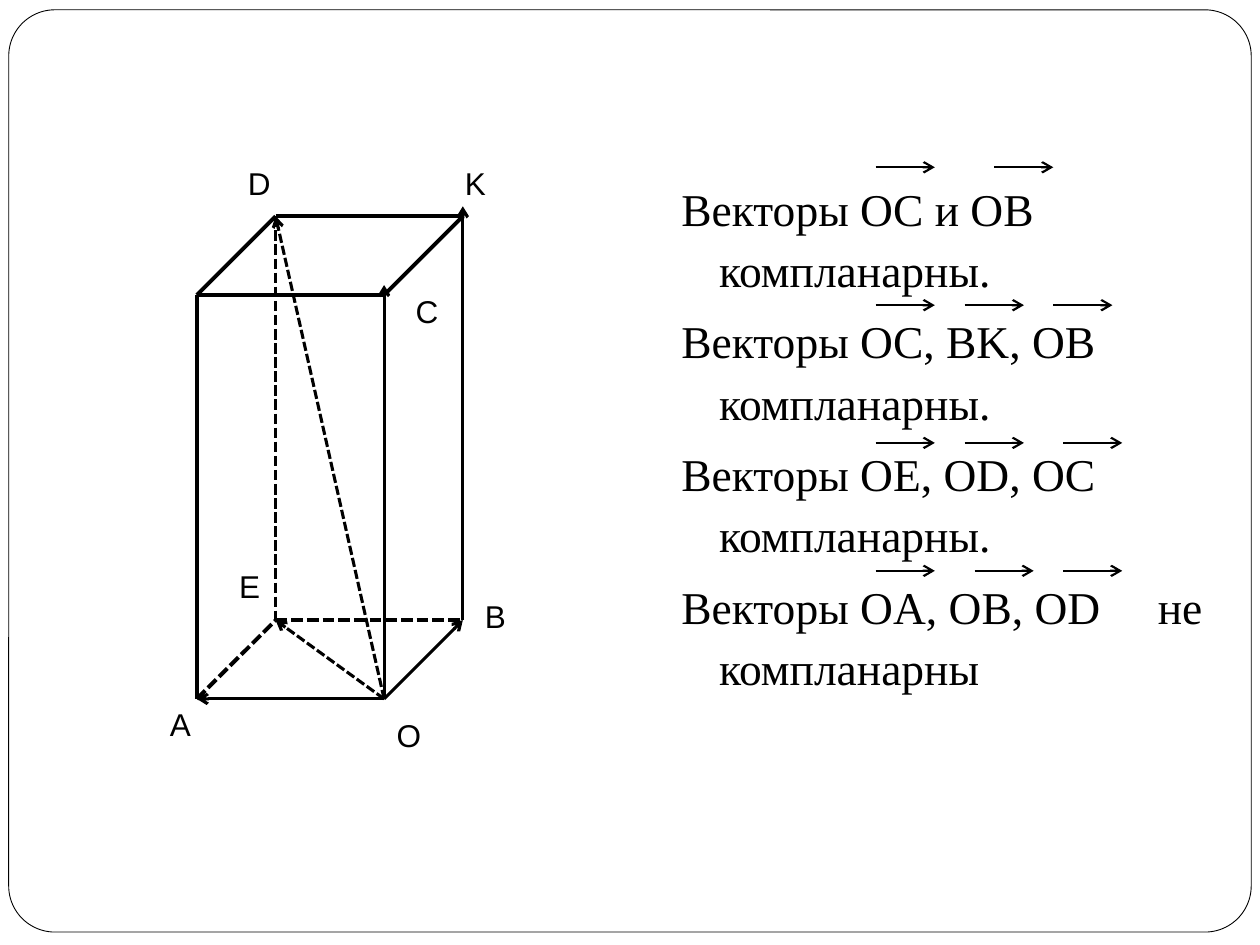
from lxml import etree
from pptx import Presentation
from pptx.dml.color import RGBColor
from pptx.enum import dml, shapes, text
from pptx.oxml.ns import qn
from pptx.util import Pt

THEME = {
    "ink": RGBColor(0, 0, 0),
    "paper": RGBColor(255, 255, 255),
    "body": {"name": "Times New Roman", "size": Pt(26)},
    "label": {"name": "Arial", "size": Pt(18)},
}

STATEMENTS = [
    ("Векторы OC и OB компланарны.",),
    ("Векторы OC, BK, OB компланарны.",),
    ("Векторы OE, OD, OC компланарны.",),
    ("Векторы OA, OB, OD", " ", "не компланарны"),
]
WORD_GAP = 26
PARAGRAPH = {"line_spacing": Pt(35), "space_before": Pt(5.8)}

VECTOR_MARKS = [
    (95.6, (500.4, 568.1)),
    (174.4, (500.4, 551.3, 601.9)),
    (253.1, (500.4, 551.3, 607.5)),
    (326.2, (500.4, 556.9, 607.5)),
]
MARK_LENGTH = 33.8

LEFT, BOTTOM, WIDTH, HEIGHT, DEPTH = 112.5, 399.4, 107, 230.8, 45
OVERSHOOT = 5.7
VERTICES = {
    "A": (LEFT, BOTTOM),
    "O": (LEFT + WIDTH, BOTTOM),
    "E": (LEFT + DEPTH, BOTTOM - DEPTH),
    "B": (LEFT + WIDTH + DEPTH, BOTTOM - DEPTH),
}
for base, top in zip("AOEB", "FCDK"):
    x, y = VERTICES[base]
    VERTICES[top] = (x, y - HEIGHT)

EDGES = [
    ("BK", 1.75, False, True),
    ("OC", 1.75, False, True),
    ("FA", 2, False, False),
    ("DE", 2, True, False),
    ("OA", 1.75, False, True),
    ("OB", 1.75, False, True),
    ("OE", 1.75, True, True),
    ("AE", 2.25, True, False),
    ("EB", 2.25, True, False),
    ("DK", 2.25, False, False),
    ("FC", 2.25, False, False),
    ("FD", 2.25, False, False),
    ("CK", 2.25, False, False),
    ("OD", 1.75, True, True),
]
LABELS = [
    ("D", 134.6, 90, 39.6),
    ("K", 258.5, 90, 39.6),
    ("C", 230.4, 163.4, 22.3),
    ("B", 270, 337.7, 33.8),
    ("O", 219.6, 405.4, 28.1),
    ("A", 90, 399.6, 22.3),
    ("E", 129.6, 320.4, 22.3),
]


def add_line(page, start, end, width, dashed=False, arrow=False):
    line = page.shapes.add_connector(
        shapes.MSO_CONNECTOR.STRAIGHT, *(Pt(v) for v in (*start, *end))
    )
    line.line.color.rgb = THEME["ink"]
    line.line.width = Pt(width)
    if dashed:
        line.line.dash_style = dml.MSO_LINE.SQUARE_DOT
    if arrow:
        etree.SubElement(line.line._get_or_add_ln(), qn("a:tailEnd"), type="arrow")
    etree.SubElement(line._element.spPr, qn("a:effectLst"))


def add_box(page, left, top, width, height):
    box = page.shapes.add_textbox(*(Pt(v) for v in (left, top, width, height)))
    box.text_frame.word_wrap = True
    return box.text_frame


def add_span(para, words, style):
    span = para.add_run()
    span.text = words
    for name, value in THEME[style].items():
        setattr(span.font, name, value)
    span.font.color.rgb = THEME["ink"]
    return span


def add_frame(page):
    frame = page.shapes.add_shape(
        shapes.MSO_SHAPE.ROUNDED_RECTANGLE, Pt(5), Pt(5.6), Pt(710), Pt(527)
    )
    frame.adjustments[0] = 0.05
    frame.shadow.inherit = False
    frame.fill.solid()
    frame.fill.fore_color.rgb = THEME["paper"]
    frame.line.color.rgb = THEME["ink"]
    frame.line.width = Pt(0.5)


def add_statements(page):
    box = add_box(page, 382.3, 95.8, 315.4, 337.7)
    box.vertical_anchor = text.MSO_ANCHOR.TOP
    for index, parts in enumerate(STATEMENTS):
        para = box.add_paragraph() if index else box.paragraphs[0]
        for name, value in PARAGRAPH.items():
            setattr(para, name, value)
        props = para._p.get_or_add_pPr()
        props.set("marL", str(Pt(21.6)))
        props.set("indent", str(-Pt(21.6)))
        for words in parts:
            span = add_span(para, words, "body")
            if words == " ":
                span._r.get_or_add_rPr().set("spc", str(WORD_GAP * 100))


def add_prism(page):
    for (first, last), width, dashed, arrow in EDGES:
        x, y = VERTICES[last]
        if first + last in ("BK", "OC"):
            y -= OVERSHOOT
        add_line(page, VERTICES[first], (x, y), width, dashed, arrow)
    for letter, left, top, width in LABELS:
        box = add_box(page, left, top, width, 28.8)
        add_span(box.paragraphs[0], letter, "label")


def main():
    deck = Presentation()
    deck.slide_width, deck.slide_height = Pt(720), Pt(540)
    page = deck.slides.add_slide(deck.slide_layouts[6])
    add_frame(page)
    add_statements(page)
    add_prism(page)
    for y, starts in VECTOR_MARKS:
        for x in starts:
            add_line(page, (x, y), (x + MARK_LENGTH, y), 1.25, arrow=True)
    deck.save("out.pptx")


if __name__ == "__main__":
    main()
